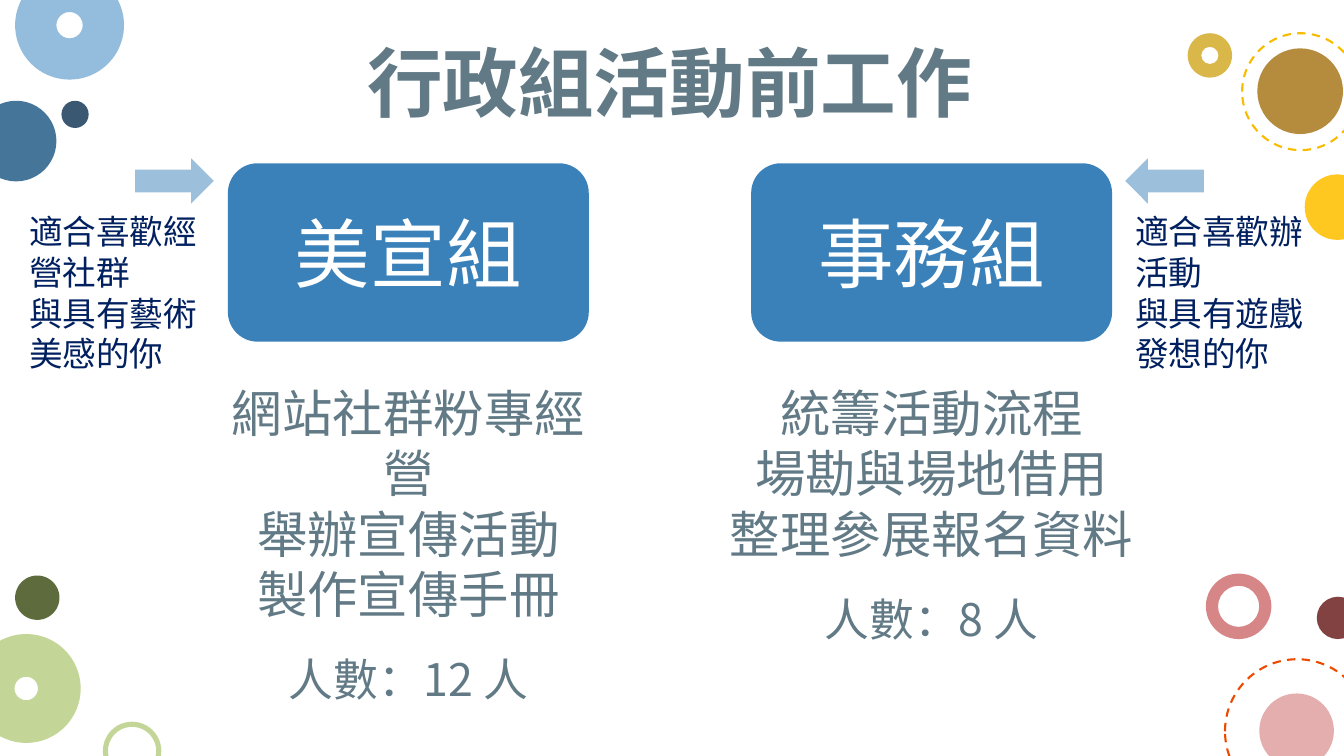
from lxml.etree import SubElement
from pptx import Presentation
from pptx.dml.color import RGBColor
from pptx.enum.dml import MSO_LINE
from pptx.enum.shapes import MSO_SHAPE
from pptx.enum.text import MSO_ANCHOR, PP_ALIGN
from pptx.oxml.ns import qn
from pptx.util import Inches, Pt

FONT = "Noto Sans CJK SC"
SLATE, BLUE, NAVY, WHITE = "617A86", "3A81BA", "002060", "FFFFFF"

# left, top, diameter, colour, ring thickness (0 for a full disc)
DISCS = [
    (-0.24, 1, 0.8, "2B618B", 0),
    (11.96, 5.69, 0.65, "D07576", 0.186),
    (0.15, -0.29, 1.08, "85B4D9", 0.379),
    (0.61, 1, 0.27, "1D405D", 0),
    (1.02, 7.16, 0.58, "BBD189", 0.088),
    (13.06, 5.92, 0.42, "712627", 0),
    (-0.28, 6.29, 1.08, "BBD189", 0.392),
    (12.49, 6.88, 0.74, "E0A3A3", 0),
    (11.78, 0.33, 0.44, "D5AD2F", 0.306),
    (12.47, 0.48, 0.85, "AB7A22", 0),
    (12.94, 1.73, 0.65, "FFC000", 0),
    (0.15, 5.71, 0.44, "465621", 0),
]
DASHED_CIRCLES = [(12.15, 6.54, 1.43, "ED4A00"), (12.32, 0.33, 1.16, "F8BB00")]


def colour(code):
    return RGBColor.from_string(code)


def add_solid(page, kind, box, fill, opacity=100):
    shape = page.shapes.add_shape(kind, *map(Inches, box))
    shape.shadow.inherit = False
    shape.line.fill.background()
    shape.fill.solid()
    shape.fill.fore_color.rgb = colour(fill)
    if opacity < 100:
        tone = shape.fill._xPr.find(qn("a:solidFill"))[0]
        SubElement(tone, qn("a:alpha")).set("val", str(opacity * 1000))
    return shape


def format_paragraph(para, size, code, align=PP_ALIGN.LEFT, tight=True):
    """Set one face for Latin and Chinese; tight lines are 1.19 times the size."""
    para.alignment = align
    para.font.name = FONT
    para.font.size = Pt(size)
    para.font.color.rgb = colour(code)
    for span in para.runs:
        span.font.name = FONT
        SubElement(span.font._element, qn("a:ea")).set("typeface", FONT)
    if tight:
        para.line_spacing = Pt(round(size * 1.19))


def fill_text(frame, lines, size, code, align=PP_ALIGN.LEFT):
    frame.word_wrap = True
    frame.vertical_anchor = MSO_ANCHOR.TOP
    # Tight lines sit high, so the top margin grows with the text size
    frame.margin_top = Inches(0.05) + Pt(0.13 * size)
    frame.text = "\n".join(lines)
    for para in frame.paragraphs:
        format_paragraph(para, size, code, align)


def add_decoration(page):
    for left, top, size, code, ring in DISCS:
        kind = MSO_SHAPE.DONUT if ring else MSO_SHAPE.OVAL
        disc = add_solid(page, kind, (left, top, size, size), code, 87)
        if ring:
            disc.adjustments[0] = ring
    for left, top, size, code in DASHED_CIRCLES:
        circle = add_solid(page, MSO_SHAPE.OVAL, (left, top, size, size), code)
        circle.fill.background()
        circle.line.color.rgb = colour(code)
        circle.line.width = Pt(1.5)
        circle.line.dash_style = MSO_LINE.DASH


def add_title(page, box, text):
    title = page.shapes.title
    title.left, title.top, title.width, title.height = map(Inches, box)
    fill_text(title.text_frame, [text], 54, SLATE)
    title.text_frame.paragraphs[0].font.bold = True


def add_team(page, left, top, name, tasks, people, task_width):
    """A name card with the team's tasks and head count centred below it."""
    width = 3.58
    card = add_solid(page, MSO_SHAPE.ROUNDED_RECTANGLE, (left, top, width, 1.77), BLUE)
    card.text_frame.text = name
    card.text_frame.vertical_anchor = MSO_ANCHOR.MIDDLE
    format_paragraph(card.text_frame.paragraphs[0], 54, WHITE, PP_ALIGN.CENTER, tight=False)

    task_left = left + (width - task_width) / 2
    box = page.shapes.add_textbox(
        *map(Inches, (task_left, top + 2.06, task_width, 2.8)))
    fill_text(box.text_frame, tasks, 36, SLATE, PP_ALIGN.CENTER)
    count = box.text_frame.add_paragraph()
    count.text = people
    count.space_before = Pt(21)
    format_paragraph(count, 32, SLATE, PP_ALIGN.CENTER)


def add_hint(page, left, top, lines, arrow, arrow_left):
    """An arrow towards the card, with a note on who suits the team."""
    add_solid(page, arrow, (arrow_left, top, 0.78, 0.45), BLUE, 50)
    box = page.shapes.add_textbox(*map(Inches, (left, top + 0.43, 1.94, 1.72)))
    fill_text(box.text_frame, lines, 24, NAVY)


def main():
    deck = Presentation()
    deck.slide_width, deck.slide_height = Inches(13.33), Inches(7.5)
    page = deck.slides.add_slide(deck.slide_layouts[5])
    page.background.fill.solid()
    page.background.fill.fore_color.rgb = colour(WHITE)

    add_decoration(page)
    add_title(page, (3.54, 0.22, 6.26, 1.01), "行政組活動前工作")

    # Publicity team on the left, general affairs team on the right
    add_team(page, 2.26, 1.62, "美宣組",
             ["網站社群粉專經營", "舉辦宣傳活動", "製作宣傳手冊"], "人數：12 人", 3.82)
    add_team(page, 7.45, 1.62, "事務組",
             ["統籌活動流程", "場勘與場地借用", "整理參展報名資料"], "人數：8 人", 4.24)
    add_hint(page, 0.19, 1.57, ["適合喜歡經營社群", "與具有藝術美感的你"],
             MSO_SHAPE.RIGHT_ARROW, 1.34)
    add_hint(page, 11.16, 1.57, ["適合喜歡辦活動", "與具有遊戲發想的你"],
             MSO_SHAPE.LEFT_ARROW, 11.16)
    deck.save("out.pptx")


if __name__ == "__main__":
    main()
